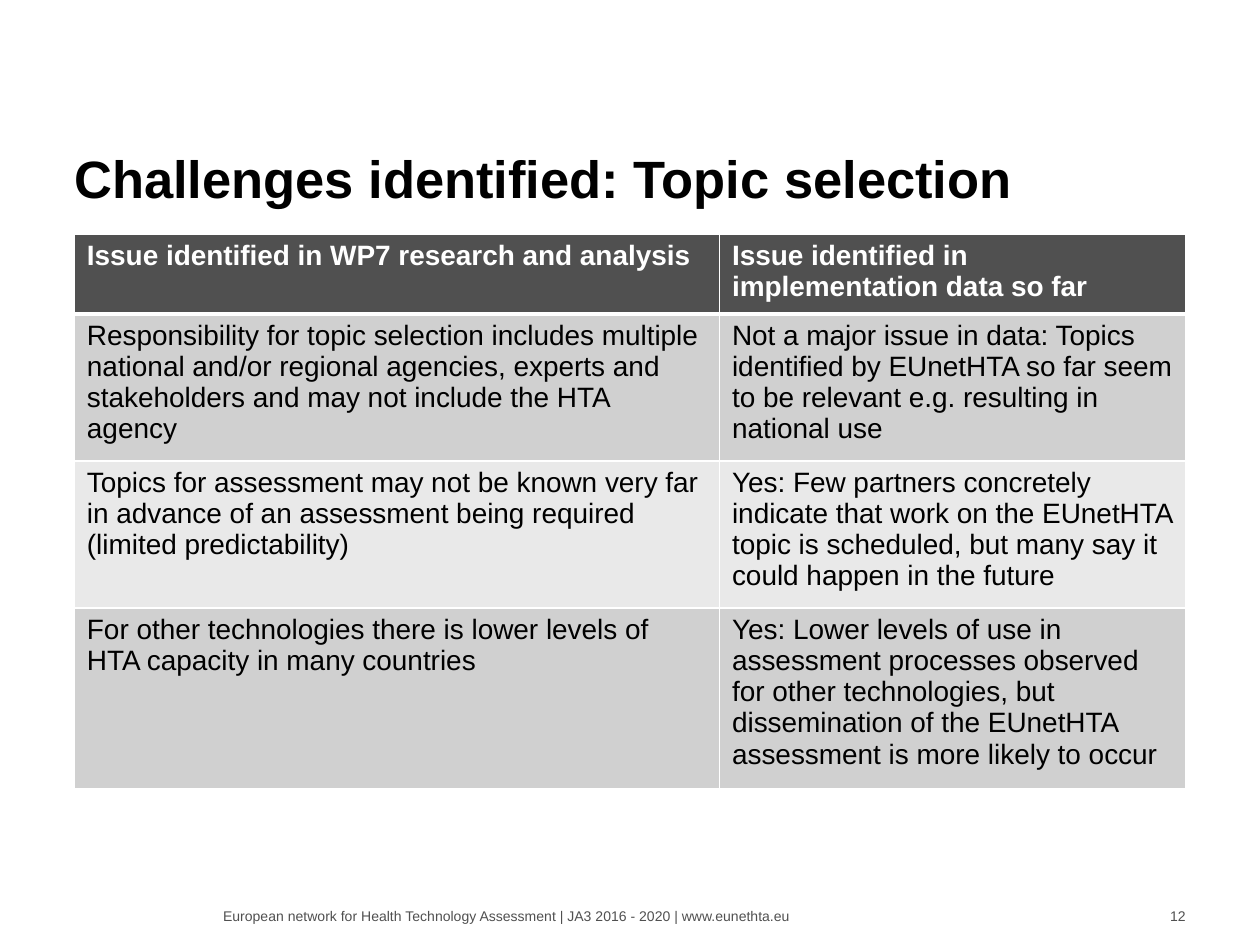
from dataclasses import dataclass

from lxml import etree
from pptx import Presentation
from pptx.dml.color import RGBColor
from pptx.enum import text
from pptx.oxml.ns import qn
from pptx.util import Inches, Pt


@dataclass(frozen=True)
class Theme:
    font: str = "Arial"
    black: str = "000000"
    white: str = "FFFFFF"
    dark: str = "505050"
    bands: tuple[str, str] = ("D0D0D0", "E9E9E9")
    title_size: int = 30
    table_size: int = 16
    footer_size: int = 8
    thin: int = 1
    thick: int = 3


@dataclass(frozen=True)
class Label:
    words: str
    left: float
    top: float
    width: float
    height: float
    size: int
    color: str
    bold: bool = False
    align: text.PP_ALIGN = text.PP_ALIGN.LEFT
    anchor: text.MSO_ANCHOR = text.MSO_ANCHOR.TOP
    spacing: float = 1.0


@dataclass(frozen=True)
class Issue:
    research: str
    implementation: str


THEME = Theme()
MARGIN = 0.59
COLUMN_WIDTHS = (5.12, 3.7)
CONTENT_WIDTH = sum(COLUMN_WIDTHS)
TABLE_TOP = 1.86
ROW_HEIGHT = 0.41
FOOTER_TOP, FOOTER_HEIGHT = 7.2, 0.13
NUMBER_WIDTH = 0.67

LABELS = (
    Label("European network for Health Technology Assessment | JA3 2016 - 2020 | www.eunethta.eu",
          1.77, FOOTER_TOP, 4.69, FOOTER_HEIGHT, THEME.footer_size, THEME.dark),
    Label("Challenges identified: Topic selection",
          MARGIN, 0.64, CONTENT_WIDTH, 1.03, THEME.title_size, THEME.black,
          bold=True, anchor=text.MSO_ANCHOR.BOTTOM, spacing=0.95),
    Label("12", MARGIN + CONTENT_WIDTH - NUMBER_WIDTH, FOOTER_TOP, NUMBER_WIDTH,
          FOOTER_HEIGHT, THEME.footer_size, THEME.dark, align=text.PP_ALIGN.RIGHT),
)

# The first entry is the header row
ISSUES = (
    Issue("Issue identified in WP7 research and analysis",
          "Issue identified in implementation data so far"),
    Issue("Responsibility for topic selection includes multiple national and/or regional "
          "agencies, experts and stakeholders and may not include the HTA agency",
          "Not a major issue in data: Topics identified by EUnetHTA so far seem to be "
          "relevant e.g. resulting in national use"),
    Issue("Topics for assessment may not be known very far in advance of an assessment "
          "being required (limited predictability)",
          "Yes: Few partners concretely indicate that work on the EUnetHTA topic is "
          "scheduled, but many say it could happen in the future"),
    Issue("For other technologies there is lower levels of HTA capacity in many countries",
          "Yes: Lower levels of use in assessment processes observed for other "
          "technologies, but dissemination of the EUnetHTA assessment is more likely to occur"),
)


def style(paragraph, size: int, color: str, bold: bool) -> None:
    font = paragraph.font
    font.name, font.size, font.bold = THEME.font, Pt(size), bold
    font.color.rgb = RGBColor.from_string(color)


def draw_label(slide, label: Label) -> None:
    box = slide.shapes.add_textbox(Inches(label.left), Inches(label.top),
                                   Inches(label.width), Inches(label.height))
    frame = box.text_frame
    frame.word_wrap = True
    frame.vertical_anchor = label.anchor
    frame.margin_left = frame.margin_top = frame.margin_right = frame.margin_bottom = 0
    paragraph = frame.paragraphs[0]
    paragraph.text = label.words
    paragraph.alignment = label.align
    paragraph.line_spacing = label.spacing
    style(paragraph, label.size, label.color, label.bold)


def draw_borders(cell, top: int, bottom: int) -> None:
    properties = cell._tc.get_or_add_tcPr()
    widths = {"L": THEME.thin, "R": THEME.thin, "T": top, "B": bottom}
    for side, width in widths.items():
        line = etree.SubElement(properties, qn(f"a:ln{side}"), w=str(Pt(width)))
        fill = etree.SubElement(line, qn("a:solidFill"))
        etree.SubElement(fill, qn("a:srgbClr"), val=THEME.white)


def draw_issues(slide, issues: tuple[Issue, ...]) -> None:
    table = slide.shapes.add_table(
        len(issues), len(COLUMN_WIDTHS), Inches(MARGIN), Inches(TABLE_TOP),
        Inches(CONTENT_WIDTH), Inches(ROW_HEIGHT * len(issues))).table
    for column, width in zip(table.columns, COLUMN_WIDTHS):
        column.width = Inches(width)
    for index, issue in enumerate(issues):
        header = index == 0
        table.rows[index].height = Inches(ROW_HEIGHT)
        background = THEME.dark if header else THEME.bands[(index - 1) % 2]
        for cell, words in zip(table.rows[index].cells, (issue.research, issue.implementation)):
            # Borders come before the fill in the cell properties
            draw_borders(cell, top=THEME.thick if index == 1 else THEME.thin,
                         bottom=THEME.thick if header else THEME.thin)
            cell.fill.solid()
            cell.fill.fore_color.rgb = RGBColor.from_string(background)
            paragraph = cell.text_frame.paragraphs[0]
            paragraph.text = words
            style(paragraph, THEME.table_size,
                  THEME.white if header else THEME.black, header)


def main() -> None:
    deck = Presentation()
    deck.slide_width, deck.slide_height = Inches(10), Inches(7.5)
    slide = deck.slides.add_slide(deck.slide_layouts[6])

    # Footer, title and page number
    for label in LABELS:
        draw_label(slide, label)

    # Issues table
    draw_issues(slide, ISSUES)

    deck.save("out.pptx")


if __name__ == "__main__":
    main()
